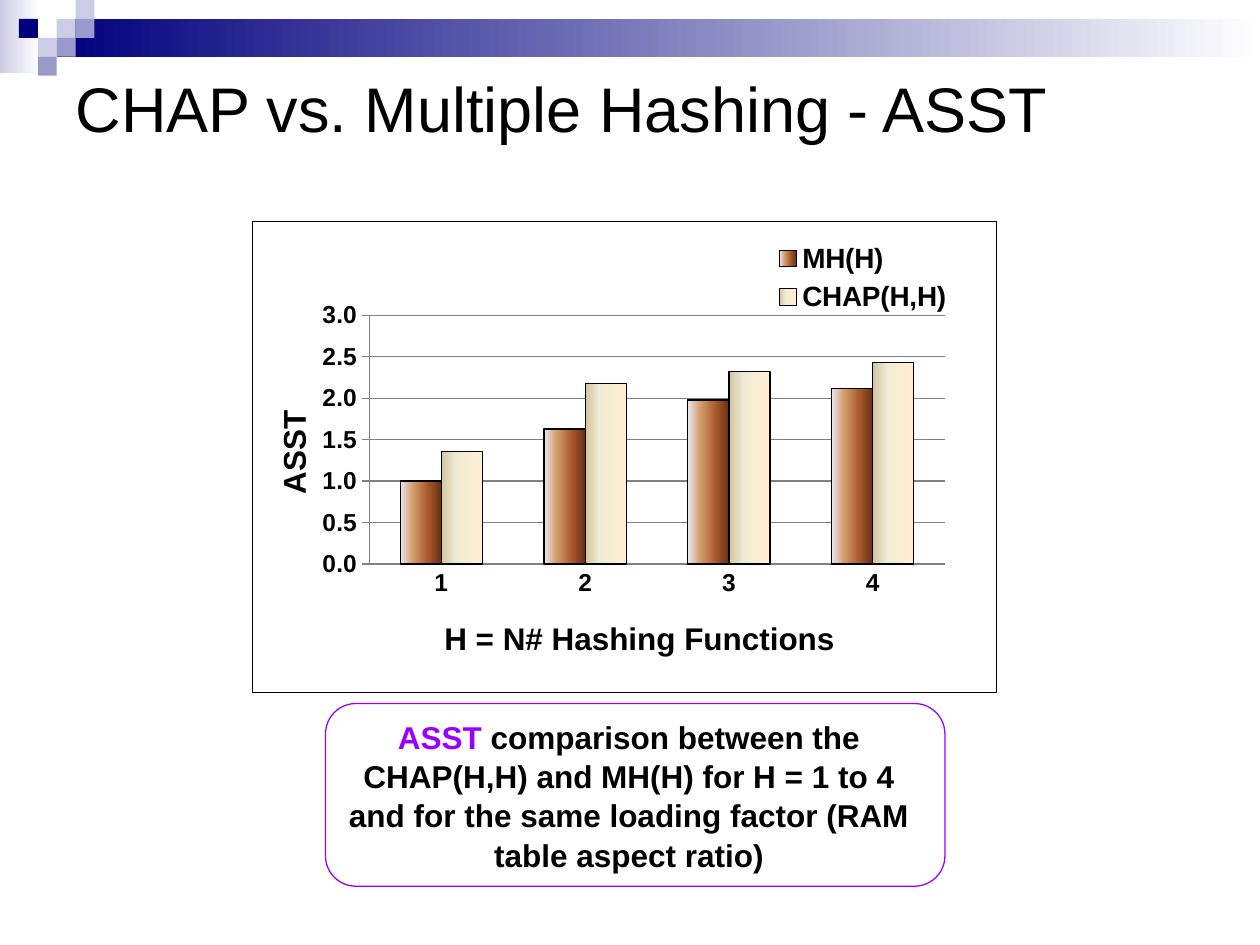
from lxml.etree import SubElement
from pptx import Presentation
from pptx.chart.data import CategoryChartData
from pptx.dml.color import RGBColor
from pptx.enum.chart import XL_CHART_TYPE, XL_LEGEND_POSITION, XL_TICK_MARK
from pptx.enum.shapes import MSO_SHAPE
from pptx.enum.text import MSO_ANCHOR, PP_ALIGN
from pptx.oxml import parse_xml
from pptx.oxml.ns import nsdecls, qn
from pptx.util import Pt

FONT = "Arial"
COLORS = {
    "navy": "00007D", "lavender": "CCCCE6", "periwinkle": "9999CC",
    "white": "FFFFFF", "black": "000000", "violet": "9900FF", "gray": "808080",
}
BAR_GRADIENTS = [
    [(0, "E8E8F1"), (30, "D49E6C"), (70, "A65528"), (100, "663012")],
    [(0, "D1C39F"), (35, "F0EBD5"), (100, "FFEFD1")],
]


def rgb(name):
    return RGBColor.from_string(COLORS[name])


def style_font(font, size, bold=False, color="black"):
    font.name, font.size, font.bold = FONT, Pt(size), bold
    font.color.rgb = rgb(color)


def fill_gradient(fill, properties, stops):
    """Left-to-right gradient through (percent, hex) stops."""
    fill.gradient()
    fill.gradient_angle = 0
    stop_list = properties.find(qn("a:gradFill")).find(qn("a:gsLst"))
    for stop in list(stop_list):
        stop_list.remove(stop)
    for percent, color in stops:
        stop = SubElement(stop_list, qn("a:gs"), pos=str(percent * 1000))
        SubElement(stop, qn("a:srgbClr"), val=color)


def set_layout(element, index, inner=False, **fractions):
    """Fix the place of a chart part, in fractions of the chart."""
    for old in element.findall(qn("c:layout")):
        element.remove(old)
    layout = parse_xml(f"<c:layout {nsdecls('c')}/>")
    manual = SubElement(layout, qn("c:manualLayout"))
    if inner:
        SubElement(manual, qn("c:layoutTarget"), val="inner")
    for key in ("x", "y"):
        SubElement(manual, qn(f"c:{key}Mode"), val="edge")
    for key, value in fractions.items():
        SubElement(manual, qn(f"c:{key}"), val=str(value))
    element.insert(index, layout)


def add_block(slide, left, top, width, height):
    block = slide.shapes.add_shape(
        MSO_SHAPE.RECTANGLE, Pt(left), Pt(top), Pt(width), Pt(height))
    block.shadow.inherit = False
    block.line.fill.background()
    return block


def add_banner(slide, left, top, width):
    unit = 10.8
    # Fading bands
    bands = [(0, 0, 22.3, 41.8, "lavender"),
             (3 * unit, unit, width - 3 * unit, 2 * unit, "navy")]
    for x, y, band_width, band_height, color in bands:
        band = add_block(slide, left + x, top + y, band_width, band_height)
        fill_gradient(band.fill, band._element.spPr,
                      [(0, COLORS[color]), (100, COLORS["white"])])
    # Squares on a grid of columns and rows
    squares = [(3, 1, "lavender"), (4, 0, "lavender"), (4, 1, "periwinkle"),
               (2, 2, "lavender"), (1, 1, "navy"), (3, 2, "periwinkle"),
               (2, 3, "periwinkle")]
    for column, row, color in squares:
        square = add_block(slide, left + column * unit, top + row * unit, unit, unit)
        square.fill.solid()
        square.fill.fore_color.rgb = rgb(color)


def add_title(slide, left, top, width, height):
    title = slide.shapes.title
    title.left, title.top, title.width, title.height = map(Pt, (left, top, width, height))
    frame = title.text_frame
    frame.text = "CHAP vs. Multiple Hashing - ASST"
    frame.vertical_anchor = MSO_ANCHOR.TOP
    frame.paragraphs[0].alignment = PP_ALIGN.LEFT
    style_font(frame.paragraphs[0].runs[0].font, 36)


def style_axis(axis, title, x, y, tick):
    axis.has_title = True
    frame = axis.axis_title.text_frame
    frame.text = title
    style_font(frame.paragraphs[0].runs[0].font, 18, bold=True)
    set_layout(axis.axis_title._element, 1, x=x, y=y)
    style_font(axis.tick_labels.font, 14, bold=True)
    axis.major_tick_mark = tick
    axis.minor_tick_mark = XL_TICK_MARK.NONE
    axis.format.line.color.rgb = rgb("gray")


def add_asst_chart(slide, left, top, width, height):
    data = CategoryChartData(number_format="General")
    data.categories = ["1", "2", "3", "4"]
    data.add_series("MH(H)", [1, 1.63, 1.98, 2.12])
    data.add_series("CHAP(H,H)", [1.36, 2.18, 2.32, 2.43])
    chart = slide.shapes.add_chart(
        XL_CHART_TYPE.COLUMN_CLUSTERED, Pt(left), Pt(top), Pt(width), Pt(height), data).chart
    chart.has_title = False
    style_font(chart.font, 10)

    # Frame and plot area
    frame = parse_xml(
        f'<c:spPr {nsdecls("c", "a")}><a:noFill/><a:ln w="9525"><a:solidFill>'
        f'<a:srgbClr val="{COLORS["black"]}"/></a:solidFill></a:ln></c:spPr>')
    chart._chartSpace.find(qn("c:txPr")).addprevious(frame)
    plot_area = chart._chartSpace.chart.plotArea
    set_layout(plot_area, 0, inner=True, x=0.157, y=0.2, w=0.773, h=0.528)

    # Axes
    style_axis(chart.category_axis, "H = N# Hashing Functions", 0.25, 0.83, XL_TICK_MARK.NONE)
    value_axis = chart.value_axis
    style_axis(value_axis, "ASST", 0.02, 0.39, XL_TICK_MARK.CROSS)
    value_axis.minimum_scale, value_axis.maximum_scale = 0, 3
    value_axis.major_unit = 0.5
    value_axis.tick_labels.number_format = "0.0"
    value_axis.tick_labels.number_format_is_linked = False
    value_axis.major_gridlines.format.line.color.rgb = rgb("gray")

    # Columns
    plot = chart.plots[0]
    plot.vary_by_categories = False
    plot.gap_width, plot.overlap = 150, 0
    for series, stops in zip(plot.series, BAR_GRADIENTS):
        fill_gradient(series.format.fill, series._element.get_or_add_spPr(), stops)
        series.format.line.color.rgb = rgb("black")
        series.format.line.width = Pt(0.75)

    # Legend
    chart.has_legend = True
    chart.legend.position = XL_LEGEND_POSITION.RIGHT
    chart.legend.include_in_layout = False
    style_font(chart.legend.font, 16, bold=True)
    set_layout(chart.legend._element, 1, x=0.7, y=0.03, w=0.24, h=0.18)


def add_caption(slide, left, top, width, height):
    caption = slide.shapes.add_shape(
        MSO_SHAPE.ROUNDED_RECTANGLE, Pt(left), Pt(top), Pt(width), Pt(height))
    caption.shadow.inherit = False
    caption.fill.background()
    caption.line.color.rgb = rgb("violet")
    caption.line.width = Pt(0.75)
    frame = caption.text_frame
    frame.word_wrap = True
    frame.vertical_anchor = MSO_ANCHOR.MIDDLE
    frame.margin_left, frame.margin_right = Pt(0), Pt(7.2)
    frame.margin_top = frame.margin_bottom = Pt(3.6)
    paragraph = frame.paragraphs[0]
    paragraph.alignment = PP_ALIGN.CENTER
    paragraph.line_spacing = 1.04
    parts = [("ASST ", "violet"),
             ("comparison between the CHAP(H,H) and MH(H) for H = 1 to 4 and for "
              "the same loading factor (RAM table aspect ratio)", "black")]
    for text, color in parts:
        run = paragraph.add_run()
        run.text = text
        style_font(run.font, 18, bold=True, color=color)


def main():
    presentation = Presentation()
    presentation.slide_width, presentation.slide_height = Pt(720), Pt(540)
    slide = presentation.slides.add_slide(presentation.slide_layouts[5])
    add_banner(slide, 0, 0, 720)
    add_title(slide, 36, 36, 648, 78)
    add_caption(slide, 186, 402, 354, 104.4)
    add_asst_chart(slide, 144, 126, 426, 270)
    presentation.save("out.pptx")


if __name__ == "__main__":
    main()
